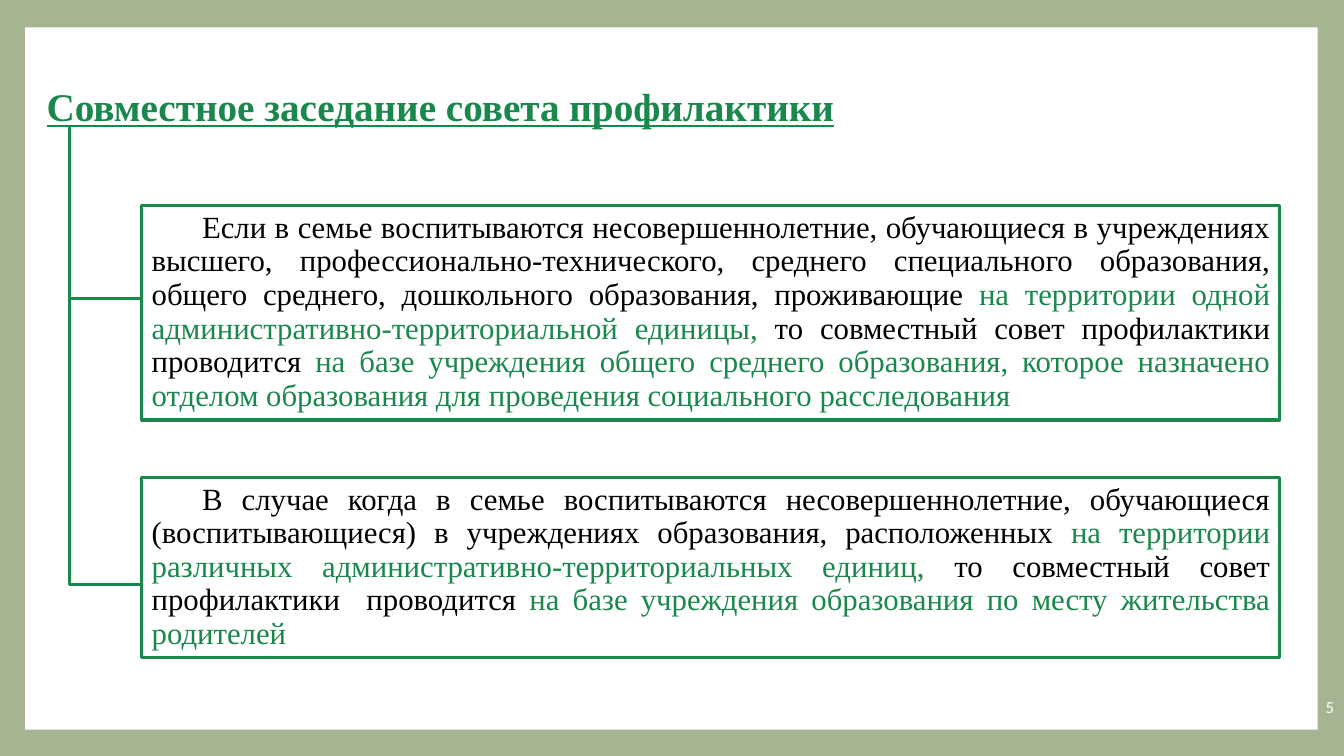
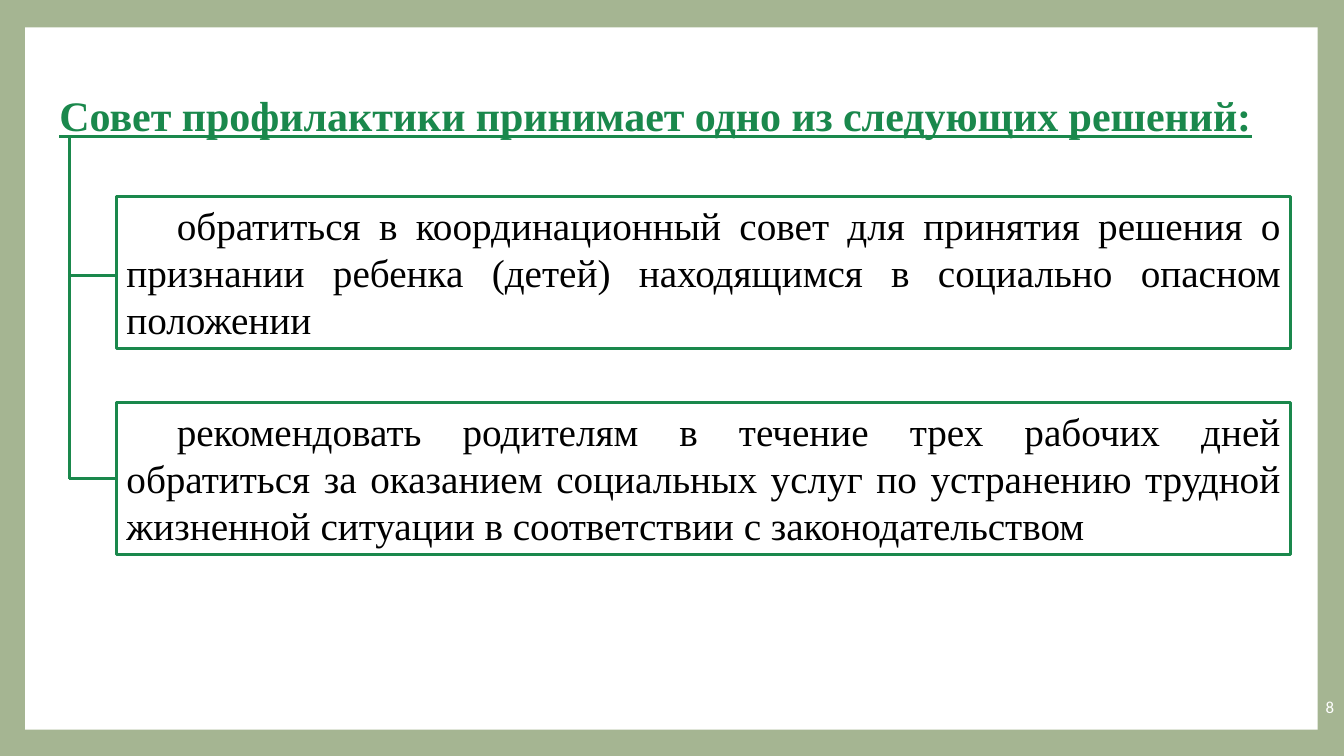
from dataclasses import dataclass
from typing import Optional

import pptx
import pptx.dml.color
import pptx.enum.shapes
import pptx.enum.text
import pptx.oxml.ns
import pptx.util
from lxml import etree

PX = 9525
WIDTH, HEIGHT = 1280, 720
SAGE, GREEN, BLACK, WHITE = "A5B592", "1A884C", "000000", "FFFFFF"
SERIF, SANS = "Times New Roman", "Calibri"
LINE_PT = 2.25
INDENT = 48

ALIGN = pptx.enum.text.PP_ALIGN
ANCHOR = pptx.enum.text.MSO_ANCHOR


@dataclass(frozen=True)
class Rect:
    x: int
    y: int
    w: int
    h: int


@dataclass(frozen=True)
class Run:
    text: str
    color: str = BLACK


@dataclass(frozen=True)
class Item:
    y: int
    h: int
    branch_y: int
    runs: tuple[Run, ...]


@dataclass(frozen=True)
class Page:
    number: int
    title: str
    title_rect: Rect
    title_pt: int
    trunk_x: int
    trunk_y: int
    box_x: int
    box_w: int
    text_pt: int
    leading_pt: Optional[int]
    items: tuple[Item, ...]


PAGES = (
    Page(
        5, "Совместное заседание совета профилактики",
        Rect(35, 74, 847, 55), 28, 66, 119, 135, 1084, 22, 24,
        (
            Item(196, 204, 284, (
                Run("Если в семье воспитываются несовершеннолетние, обучающиеся "
                    "в учреждениях высшего, профессионально-технического, среднего "
                    "специального образования, общего среднего, дошкольного "
                    "образования, проживающие "),
                Run("на территории одной административно-территориальной единицы,", GREEN),
                Run(" то совместный совет профилактики проводится "),
                Run("на базе учреждения общего среднего образования, которое назначено "
                    "отделом образования для проведения социального расследования", GREEN),
            )),
            Item(455, 171, 557, (
                Run("В случае когда в семье воспитываются несовершеннолетние, "
                    "обучающиеся (воспитывающиеся) в учреждениях образования, "
                    "расположенных "),
                Run("на территории различных административно-территориальных единиц, ", GREEN),
                Run("то совместный совет профилактики  проводится "),
                Run("на базе учреждения образования по месту жительства родителей", GREEN),
            )),
        ),
    ),
    Page(
        8, "Совет профилактики принимает одно из следующих решений:",
        Rect(47, 81, 1193, 59), 30, 66, 130, 111, 1118, 28, None,
        (
            Item(187, 145, 262, (
                Run("обратиться в координационный совет для принятия решения о "
                    "признании ребенка (детей) находящимся в социально опасном "
                    "положении"),
            )),
            Item(383, 145, 456, (
                Run("рекомендовать родителям в течение трех рабочих дней обратиться "
                    "за оказанием социальных услуг по устранению трудной жизненной "
                    "ситуации в соответствии с законодательством"),
            )),
        ),
    ),
)


def px(n: int) -> pptx.util.Emu:
    return pptx.util.Emu(n * PX)


def rgb(color: str) -> pptx.dml.color.RGBColor:
    return pptx.dml.color.RGBColor.from_string(color)


def bounds(rect: Rect) -> tuple[pptx.util.Emu, ...]:
    return px(rect.x), px(rect.y), px(rect.w), px(rect.h)


def add_rect(s, rect: Rect, fill: Optional[str] = None, line: Optional[str] = None):
    sp = s.shapes.add_shape(pptx.enum.shapes.MSO_SHAPE.RECTANGLE, *bounds(rect))
    sp.shadow.inherit = False
    if fill:
        sp.fill.solid()
        sp.fill.fore_color.rgb = rgb(fill)
    else:
        sp.fill.background()
    if line:
        sp.line.color.rgb = rgb(line)
        sp.line.width = pptx.util.Pt(LINE_PT)
    else:
        sp.line.fill.background()
    return sp


def add_line(s, x1: int, y1: int, x2: int, y2: int) -> None:
    sp = s.shapes.add_connector(
        pptx.enum.shapes.MSO_CONNECTOR.STRAIGHT, px(x1), px(y1), px(x2), px(y2))
    sp.line.color.rgb = rgb(GREEN)
    sp.line.width = pptx.util.Pt(LINE_PT)
    etree.SubElement(sp._element.spPr, pptx.oxml.ns.qn("a:effectLst"))


def write(sp, runs: tuple[Run, ...], size: int, font: str, align, anchor=ANCHOR.TOP):
    tf = sp.text_frame
    tf.word_wrap = True
    tf.vertical_anchor = anchor
    p = tf.paragraphs[0]
    p.alignment = align
    p.font.name = font
    p.font.size = pptx.util.Pt(size)
    for run in runs:
        r = p.add_run()
        r.text = run.text
        r.font.color.rgb = rgb(run.color)
    return p


def add_frame(s, number: int) -> None:
    s.background.fill.solid()
    s.background.fill.fore_color.rgb = rgb(SAGE)
    add_rect(s, Rect(24, 26, 1231, 669), fill=WHITE)
    sp = s.shapes.add_textbox(*bounds(Rect(1101, 654, 179, 38)))
    write(sp, (Run(str(number), WHITE),), 12, SANS, ALIGN.RIGHT, ANCHOR.MIDDLE)


def add_title(s, page: Page) -> None:
    sp = s.shapes.add_textbox(*bounds(page.title_rect))
    p = write(sp, (Run(page.title, GREEN),), page.title_pt, SERIF, ALIGN.LEFT)
    p.font.bold = True
    p.font.underline = True


def add_item(s, page: Page, item: Item) -> None:
    sp = add_rect(s, Rect(page.box_x, item.y, page.box_w, item.h), line=GREEN)
    p = write(sp, item.runs, page.text_pt, SERIF, ALIGN.JUSTIFY)
    p._p.get_or_add_pPr().set("indent", str(px(INDENT)))
    if page.leading_pt:
        p.line_spacing = pptx.util.Pt(page.leading_pt)
    add_line(s, page.trunk_x, item.branch_y, page.box_x, item.branch_y)


def add_page(prs, page: Page) -> None:
    s = prs.slides.add_slide(prs.slide_layouts[6])
    add_frame(s, page.number)
    add_title(s, page)
    add_line(s, page.trunk_x, page.trunk_y, page.trunk_x, page.items[-1].branch_y)
    for item in page.items:
        add_item(s, page, item)


def main() -> None:
    prs = pptx.Presentation()
    prs.slide_width, prs.slide_height = px(WIDTH), px(HEIGHT)
    for page in PAGES:
        add_page(prs, page)
    prs.save("out.pptx")


if __name__ == "__main__":
    main()
